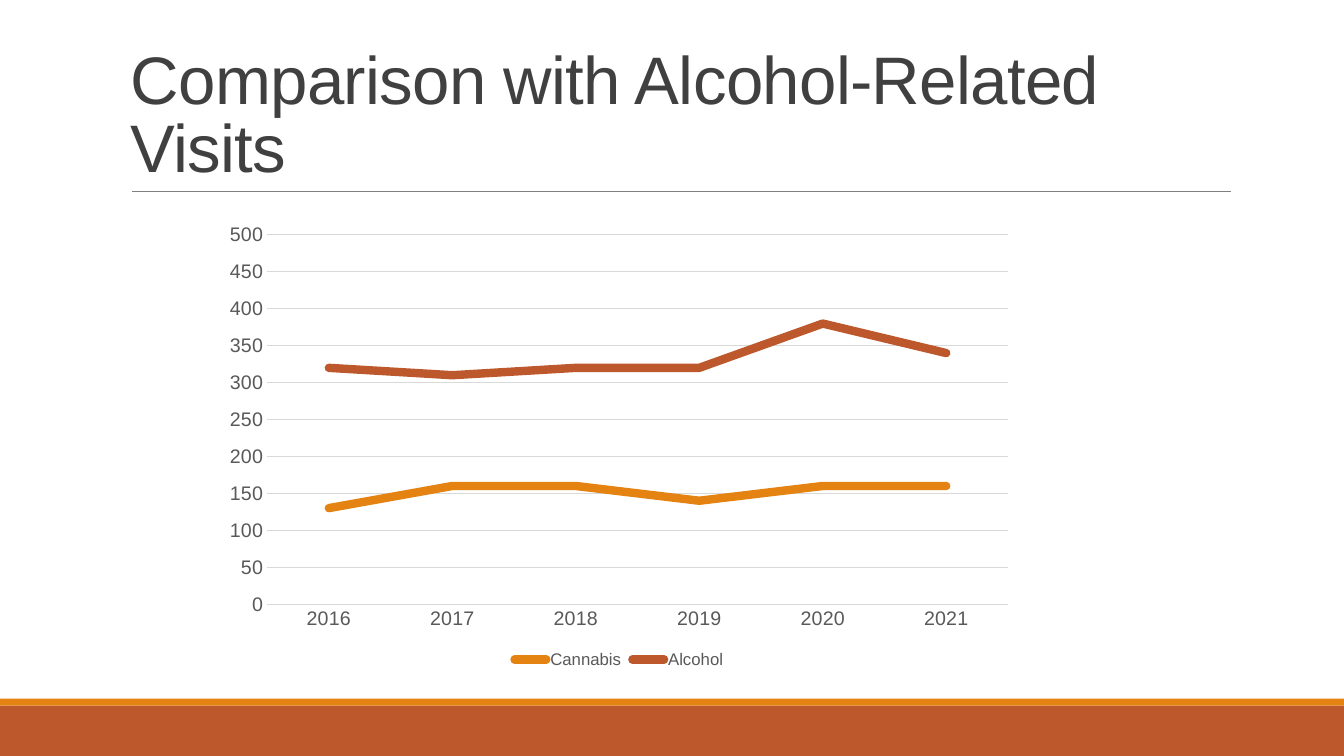
import pptx
import pptx.chart.data
import pptx.dml.color
import pptx.enum.chart
import pptx.enum.shapes
import pptx.enum.text
import pptx.oxml
import pptx.util

Pt = pptx.util.Pt
RGBColor = pptx.dml.color.RGBColor

ORANGE = RGBColor(0xE4, 0x83, 0x12)
RUST = RGBColor(0xBD, 0x58, 0x2C)
RULE_GRAY = RGBColor(0x80, 0x80, 0x80)
TITLE_GRAY = RGBColor(0x40, 0x40, 0x40)
LABEL_GRAY = RGBColor(0x59, 0x59, 0x59)
GRID_GRAY = RGBColor(0xD9, 0xD9, 0xD9)
FONT = "Arial"
WIDTH, HEIGHT = 960, 540

YEARS = ["2016", "2017", "2018", "2019", "2020", "2021"]
VISITS = [
    ("Cannabis", [130, 160, 160, 140, 160, 160], ORANGE),
    ("Alcohol", [320, 310, 320, 320, 380, 340], RUST),
]


def style_font(font, size, color):
    font.name = FONT
    font.size = Pt(size)
    font.color.rgb = color


def style_line(line, width, color):
    line.width = Pt(width)
    line.color.rgb = color


def add_footer(slide, left, top, width, height):
    stripe_height = 5
    bands = [
        (top + stripe_height, height - stripe_height, RUST),
        (top, stripe_height, ORANGE),
    ]
    for band_top, band_height, color in bands:
        band = slide.shapes.add_shape(
            pptx.enum.shapes.MSO_SHAPE.RECTANGLE,
            Pt(left), Pt(band_top), Pt(width), Pt(band_height))
        band.shadow.inherit = False
        band.fill.solid()
        band.fill.fore_color.rgb = color
        band.line.fill.background()


def add_title(slide, left, top, width, height, text):
    rule_left, rule_width = left + 7.8, 784.8
    bottom = top + height
    rule = slide.shapes.add_connector(
        pptx.enum.shapes.MSO_CONNECTOR.STRAIGHT,
        Pt(rule_left), Pt(bottom), Pt(rule_left + rule_width), Pt(bottom))
    style_line(rule.line, 0.5, RULE_GRAY)
    rule._element.spPr.append(pptx.oxml.parse_xml(
        '<a:effectLst xmlns:a="http://schemas.openxmlformats.org/drawingml/2006/main"/>'))

    title = slide.shapes.add_textbox(Pt(left), Pt(top), Pt(width), Pt(height))
    frame = title.text_frame
    frame.word_wrap = True
    frame.vertical_anchor = pptx.enum.text.MSO_ANCHOR.BOTTOM
    paragraph = frame.paragraphs[0]
    paragraph.line_spacing = 0.85
    run = paragraph.add_run()
    run.text = text
    style_font(run.font, 48, TITLE_GRAY)
    run._r.get_or_add_rPr().set("spc", "-50")


def add_visits_chart(slide, left, top, width, height):
    data = pptx.chart.data.CategoryChartData()
    data.categories = YEARS
    for name, values, color in VISITS:
        data.add_series(name, values)
    chart = slide.shapes.add_chart(
        pptx.enum.chart.XL_CHART_TYPE.LINE,
        Pt(left), Pt(top), Pt(width), Pt(height), data).chart
    chart.has_title = False
    chart.font.name = FONT
    chart.font.size = Pt(10)
    chart.plots[0].vary_by_categories = False

    chart.has_legend = True
    chart.legend.position = pptx.enum.chart.XL_LEGEND_POSITION.BOTTOM
    chart.legend.include_in_layout = False
    style_font(chart.legend.font, 12, LABEL_GRAY)

    for axis in (chart.category_axis, chart.value_axis):
        axis.major_tick_mark = pptx.enum.chart.XL_TICK_MARK.NONE
        axis.minor_tick_mark = pptx.enum.chart.XL_TICK_MARK.NONE
        style_font(axis.tick_labels.font, 14, LABEL_GRAY)
    style_line(chart.category_axis.format.line, 0.75, GRID_GRAY)
    value_axis = chart.value_axis
    value_axis.minimum_scale = 0
    value_axis.maximum_scale = 500
    value_axis.major_unit = 50
    value_axis.format.line.fill.background()
    value_axis.has_major_gridlines = True
    style_line(value_axis.major_gridlines.format.line, 0.75, GRID_GRAY)

    for series, (name, values, color) in zip(chart.plots[0].series, VISITS):
        series.smooth = False
        series.marker.style = pptx.enum.chart.XL_MARKER_STYLE.NONE
        style_line(series.format.line, 6, color)
        series._element.spPr.ln.set("cap", "rnd")


def main():
    presentation = pptx.Presentation()
    presentation.slide_width = Pt(WIDTH)
    presentation.slide_height = Pt(HEIGHT)
    slide = presentation.slides.add_slide(presentation.slide_layouts[6])
    add_footer(slide, 0, 499, WIDTH, 41)
    add_title(slide, 86.4, 22.5, 792, 114.2, "Comparison with Alcohol-Related Visits")
    add_visits_chart(slide, 152.6, 153.4, 579, 327)
    presentation.save("out.pptx")


if __name__ == "__main__":
    main()
